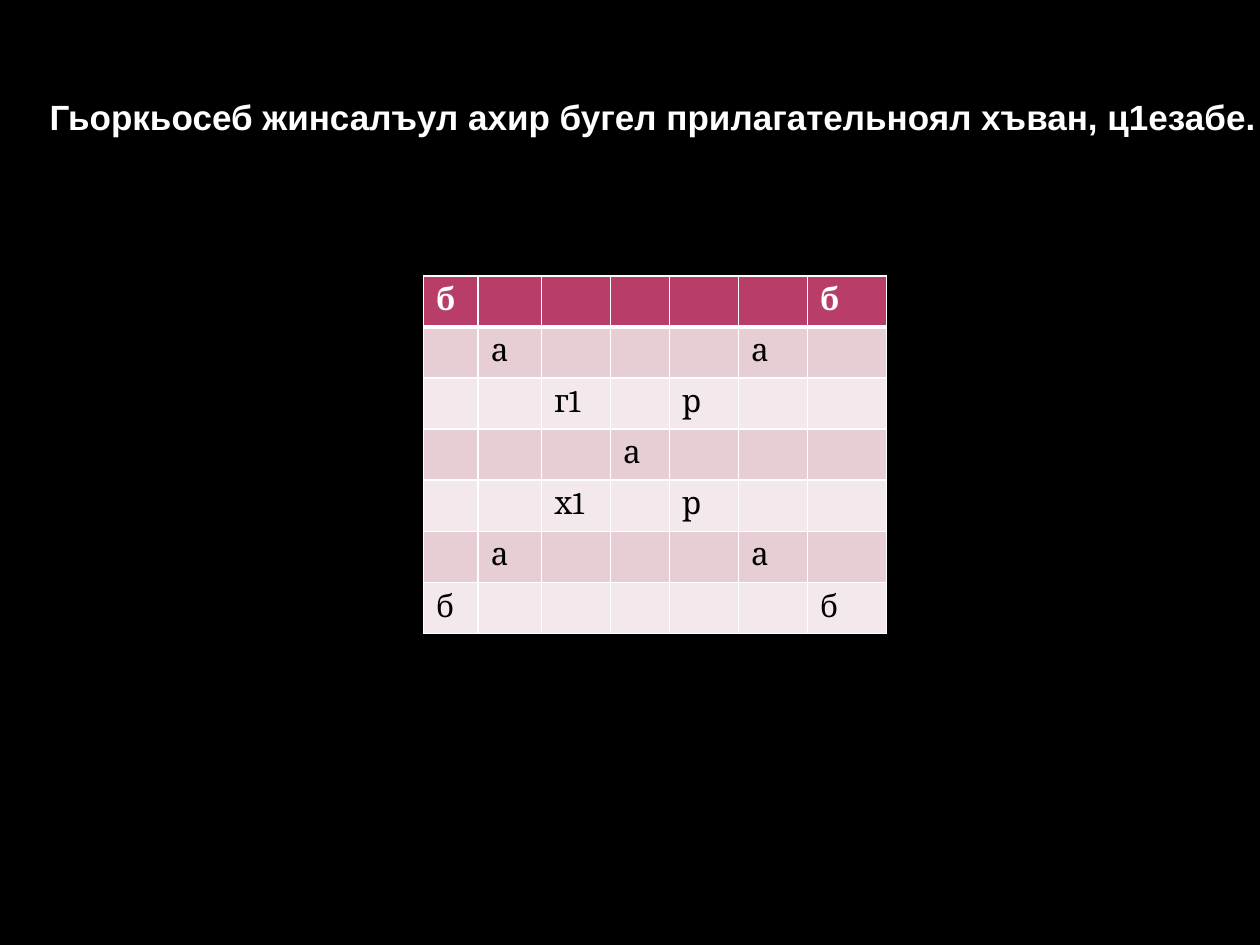
"""Build a slide with a heading and a letter grid."""
from lxml import etree
from pptx import Presentation
from pptx.dml.color import RGBColor
from pptx.enum.text import MSO_ANCHOR
from pptx.oxml.ns import qn
from pptx.util import Cm, Pt

BOTTOM = MSO_ANCHOR.BOTTOM
BLACK = RGBColor(0x00, 0x00, 0x00)
WHITE = RGBColor(0xFF, 0xFF, 0xFF)
HEADER_PINK = RGBColor(0xB8, 0x3D, 0x68)
BAND_PINKS = (RGBColor(0xF3, 0xE8, 0xEB), RGBColor(0xE6, 0xCE, 0xD4))

HEADING = "Гьоркьосеб жинсалъул ахир бугел прилагательноял хъван, ц1езабе."
LETTERS = [
    ["б", "", "", "", "", "", "б"],
    ["", "а", "", "", "", "а", ""],
    ["", "", "г1", "", "р", "", ""],
    ["", "", "", "а", "", "", ""],
    ["", "", "х1", "", "р", "", ""],
    ["", "а", "", "", "", "а", ""],
    ["б", "", "", "", "", "", "б"],
]
COLUMN_WIDTHS = [1.1, 1.28, 1.39, 1.19, 1.39, 1.39, 1.59]
ROW_HEIGHT = 1.03


def add_run(paragraph, text, font_name, size, color, bold):
    run = paragraph.add_run()
    run.text = text
    run.font.name = font_name
    run.font.size = Pt(size)
    run.font.color.rgb = color
    run.font.bold = bold


def add_heading(slide):
    heading = slide.shapes.add_textbox(Cm(0), Cm(0), Cm(25.8), Cm(2.9))
    frame = heading.text_frame
    frame.word_wrap = True
    frame.vertical_anchor = BOTTOM
    frame.margin_left = Cm(1)
    frame.margin_right = Cm(0)
    add_run(frame.paragraphs[0], HEADING, "Arial", 20, WHITE, True)


def set_border(cell, side, width):
    properties = cell._tc.get_or_add_tcPr()
    line = etree.Element(qn(f"a:{side}"), w=str(Pt(width)))
    fill = etree.SubElement(line, qn("a:solidFill"))
    etree.SubElement(fill, qn("a:srgbClr"), val=str(WHITE))
    properties.append(line)


def style_cell(cell, letter, row):
    is_header = row == 0
    for side in ("lnL", "lnR"):
        set_border(cell, side, 1)
    set_border(cell, "lnT", 3 if row == 1 else 1)
    set_border(cell, "lnB", 3 if is_header else 1)
    cell.fill.solid()
    cell.fill.fore_color.rgb = HEADER_PINK if is_header else BAND_PINKS[row % 2]
    paragraph = cell.text_frame.paragraphs[0]
    paragraph.font.size = Pt(18)
    if letter:
        color = WHITE if is_header else BLACK
        add_run(paragraph, letter, "Cambria", 18, color, is_header)


def add_letter_grid(slide):
    row_count = len(LETTERS)
    grid = slide.shapes.add_table(
        row_count, len(COLUMN_WIDTHS), Cm(8.54), Cm(5.56),
        Cm(sum(COLUMN_WIDTHS)), Cm(ROW_HEIGHT * row_count)).table
    for column, width in zip(grid.columns, COLUMN_WIDTHS):
        column.width = Cm(width)
    for row, letters in enumerate(LETTERS):
        grid.rows[row].height = Cm(ROW_HEIGHT)
        for column, letter in enumerate(letters):
            style_cell(grid.cell(row, column), letter, row)


def main():
    presentation = Presentation()
    presentation.slide_width = Cm(25.4)
    presentation.slide_height = Cm(19.05)
    slide = presentation.slides.add_slide(presentation.slide_layouts[6])
    slide.background.fill.solid()
    slide.background.fill.fore_color.rgb = BLACK
    add_heading(slide)
    add_letter_grid(slide)
    presentation.save("out.pptx")


if __name__ == "__main__":
    main()
